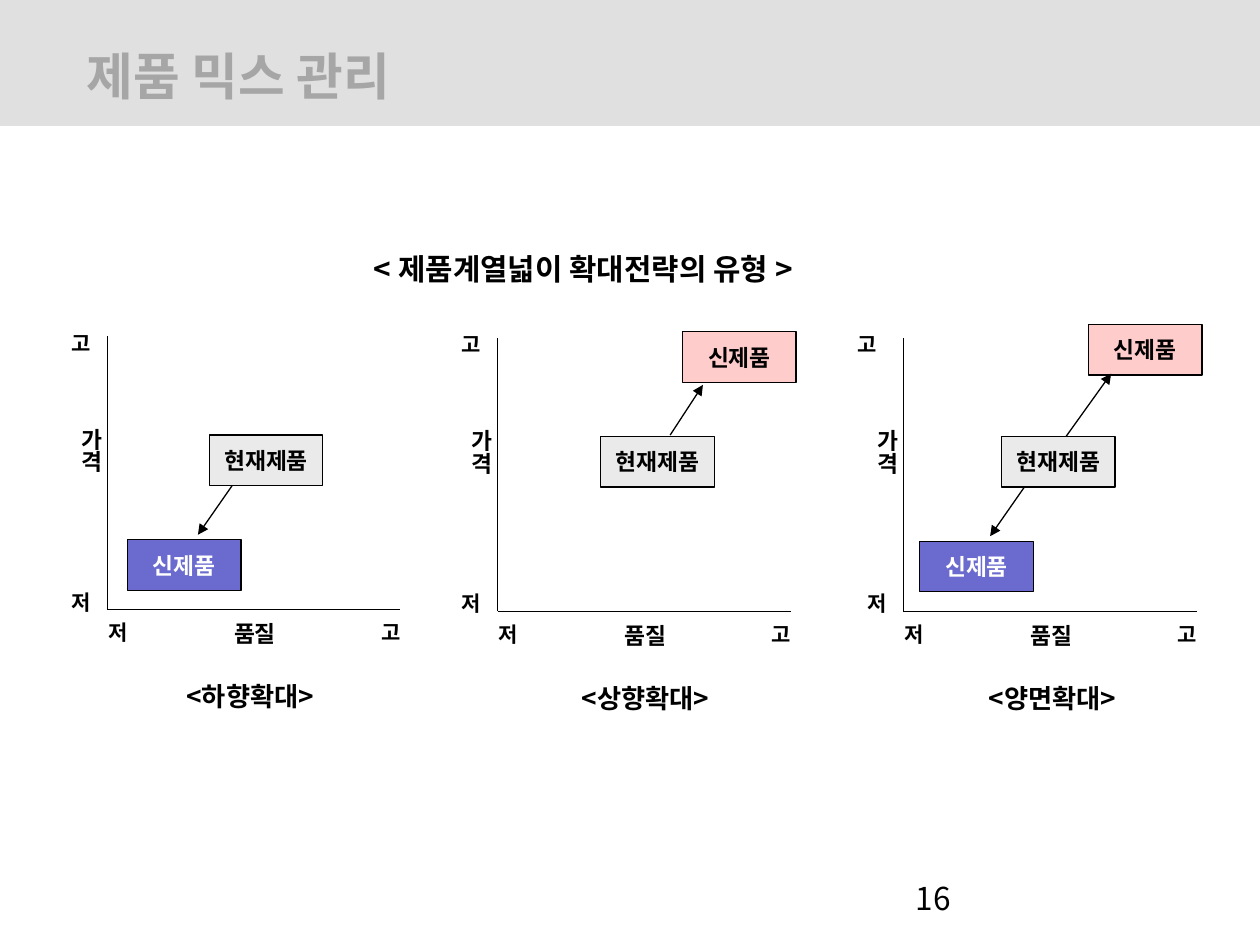
import lxml.etree
import pptx
import pptx.dml.color
import pptx.enum.shapes
import pptx.enum.text
import pptx.oxml.ns
import pptx.util
from pptx.util import Cm

RGBColor = pptx.dml.color.RGBColor
BLACK = RGBColor(0x00, 0x00, 0x00)
WHITE = RGBColor(0xFF, 0xFF, 0xFF)
BAND_GRAY = RGBColor(0xBF, 0xBF, 0xBF)
TITLE_GRAY = RGBColor(0xA6, 0xA6, 0xA6)
CURRENT_GRAY = RGBColor(0xEA, 0xEA, 0xEA)
LOWER_BLUE = RGBColor(0x6B, 0x6B, 0xCF)
UPPER_PINK = RGBColor(0xFF, 0xCC, 0xCC)
KOREAN_FONT = "Noto Sans CJK KR"
PRODUCT_WIDTH, PRODUCT_HEIGHT = 2.29, 1.02


def add_element(parent, tag, **attributes):
    """Append a DrawingML element to a parent."""
    element = lxml.etree.SubElement(parent, pptx.oxml.ns.qn(tag))
    for name, value in attributes.items():
        element.set(name, value)
    return element


def write_text(shape, text, size, color=BLACK, bold=True, font_name=KOREAN_FONT):
    """Write one paragraph and style it."""
    paragraph = shape.text_frame.paragraphs[0]
    paragraph.text = text
    font = paragraph.font
    font.name = font_name
    font.size = pptx.util.Pt(size)
    font.bold = bold
    font.color.rgb = color
    add_element(paragraph._p.pPr.find(pptx.oxml.ns.qn("a:defRPr")), "a:ea", typeface=KOREAN_FONT)
    return paragraph


def add_label(slide, box, text, size, wrap=False, **style):
    """Add a text box at a box given in centimetres."""
    shape = slide.shapes.add_textbox(*map(Cm, box))
    shape.text_frame.word_wrap = wrap
    write_text(shape, text, size, **style)
    return shape


def add_line(slide, start, end, arrow=False):
    """Add a thin black line, with an arrowhead at its end if asked."""
    line = slide.shapes.add_connector(
        pptx.enum.shapes.MSO_CONNECTOR.STRAIGHT, *map(Cm, (*start, *end)))
    line.line.color.rgb = BLACK
    line.line.width = pptx.util.Pt(0.75)
    if arrow:
        add_element(line.line._get_or_add_ln(), "a:tailEnd", type="triangle")
    add_element(line._element.spPr, "a:effectLst")


def add_product(slide, left, top, text, fill, color=BLACK):
    """Add a product box."""
    shape = slide.shapes.add_shape(
        pptx.enum.shapes.MSO_SHAPE.RECTANGLE,
        *map(Cm, (left, top, PRODUCT_WIDTH, PRODUCT_HEIGHT)))
    shape.shadow.inherit = False
    shape.fill.solid()
    shape.fill.fore_color.rgb = fill
    shape.line.color.rgb = BLACK
    shape.line.width = pptx.util.Pt(0.75)
    shape.text_frame.word_wrap = False
    shape.text_frame.vertical_anchor = pptx.enum.text.MSO_ANCHOR.MIDDLE
    paragraph = write_text(shape, text, 13, color)
    paragraph.alignment = pptx.enum.text.PP_ALIGN.CENTER


def add_header(slide, width, height):
    """Add the translucent band and the slide title."""
    band = slide.shapes.add_shape(
        pptx.enum.shapes.MSO_SHAPE.RECTANGLE, 0, 0, Cm(width), Cm(height))
    band.shadow.inherit = False
    band.fill.solid()
    band.fill.fore_color.rgb = BAND_GRAY
    band.line.fill.background()
    color = band._element.spPr.find(".//" + pptx.oxml.ns.qn("a:srgbClr"))
    add_element(color, "a:alpha", val="48000")
    title = add_label(slide, (1.5, 0.33, 15.39, 1.4), "제품 믹스 관리", 29,
                      wrap=True, color=TITLE_GRAY, font_name="Arial")
    title.text_frame.margin_top = Cm(0.58)


def add_axes(slide, left, top, width, height, high_offset):
    """Add the price and quality axes with their labels."""
    bottom = top + height
    add_line(slide, (left, top), (left, bottom))
    add_line(slide, (left, bottom), (left + width, bottom))
    below = height + 0.08
    for text, x, y in (
        ("고", high_offset, -0.25),
        ("저", -0.97, height - 0.53),
        ("저", -0.23, below),
        ("고", width - 0.63, below),
    ):
        add_label(slide, (left + x, top + y, 1.02, 0.91), text, 12)
    price = add_label(slide, (left - 1.07, top + 1.6, 1.14, 1.37), "가격", 13)
    price.text_frame._txBody.bodyPr.set("vert", "eaVert")
    add_label(slide, (left + 2.31, top + below, 1.55, 0.97), "품질", 13)


def add_strategy(slide, left, top, caption, caption_offset, current_offset,
                 lower=False, upper=None, high_offset=-0.97):
    """Add one panel: axes, products, arrows and caption."""
    add_axes(slide, left, top, 5.91, 5.51, high_offset)
    x, y = left + current_offset, top + 1.99
    add_product(slide, x, y, "현재제품", CURRENT_GRAY)
    if lower:
        add_product(slide, x - 1.65, y + 2.11, "신제품", LOWER_BLUE, WHITE)
        add_line(slide, (x + 0.46, y + PRODUCT_HEIGHT), (x - 0.23, y + 2.01), arrow=True)
    if upper:
        (dx, dy), (start_x, start_y), (end_x, end_y) = upper
        add_product(slide, x + dx, y + dy, "신제품", UPPER_PINK)
        add_line(slide, (x + start_x, y + start_y), (x + end_x, y + end_y), arrow=True)
    add_label(slide, (left + caption_offset, top + 6.81, 3.63, 0.89), caption, 15, wrap=True)


def main():
    """Build the slide and save it."""
    presentation = pptx.Presentation()
    presentation.slide_width, presentation.slide_height = Cm(25.4), Cm(19.05)
    slide = presentation.slides.add_slide(presentation.slide_layouts[6])
    add_header(slide, 25.4, 2.54)
    add_label(slide, (7.29, 4.93, 10.39, 0.99), "< 제품계열넓이 확대전략의 유형 >", 17, wrap=True)
    add_strategy(slide, 2.16, 6.78, "<하향확대>", 1.35, 2.06, lower=True)
    add_strategy(slide, 10.03, 6.81, "<상향확대>", 1.45, 2.08,
                 upper=((1.65, -2.11), (1.4, -0.03), (2.06, -1.04)))
    add_strategy(slide, 18.21, 6.81, "<양면확대>", 1.47, 1.98, lower=True,
                 upper=((1.75, -2.26), (1.3, 0), (2.21, -1.27)), high_offset=-1.17)
    number = add_label(slide, (18.21, 17.7, 5.92, 0.81), "16", 18, wrap=True, bold=False)
    number.text_frame.vertical_anchor = pptx.enum.text.MSO_ANCHOR.MIDDLE
    presentation.save("out.pptx")


if __name__ == "__main__":
    main()
